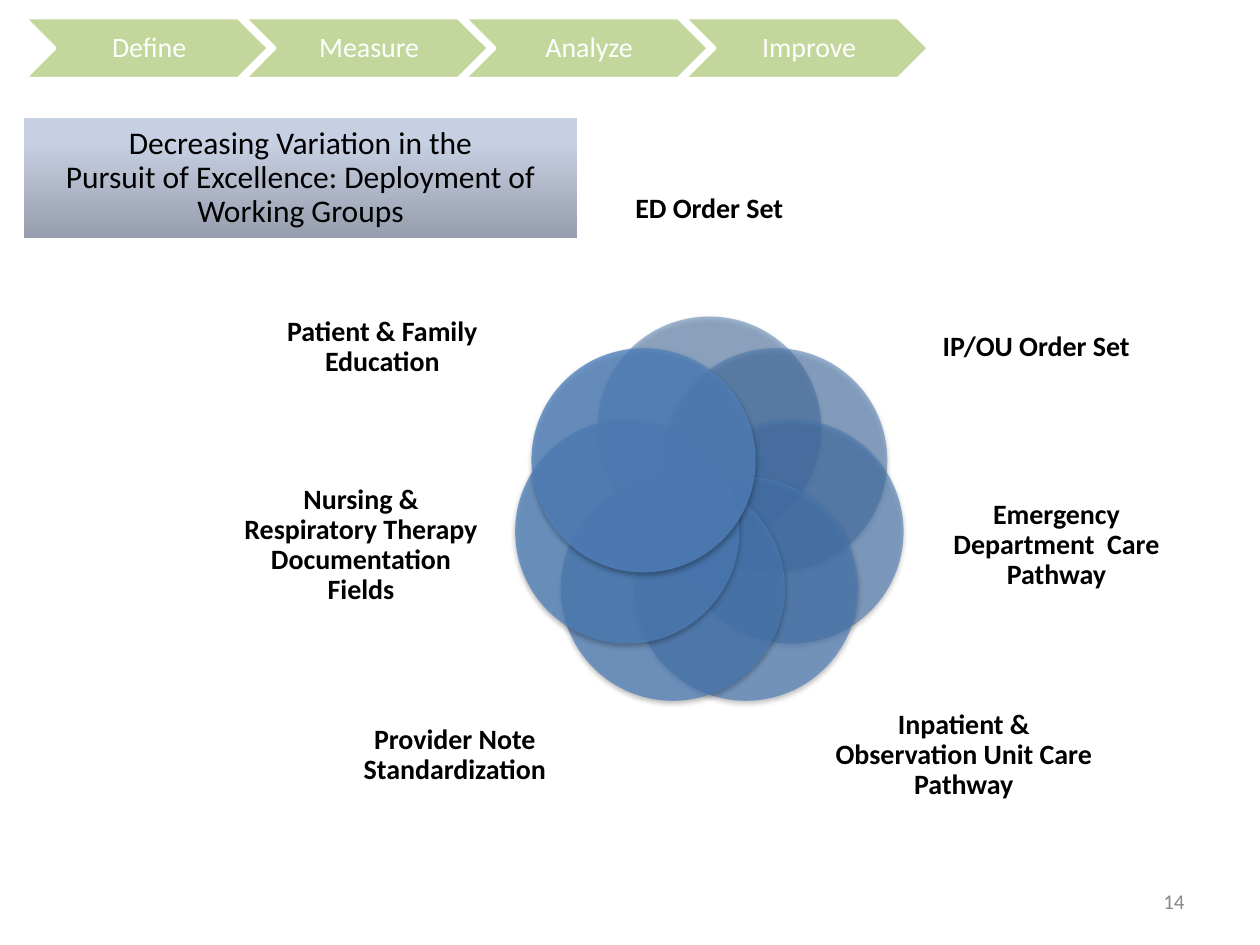
"""Build the working-groups slide: process chevrons, title panel and a seven-circle Venn."""
from math import cos, pi, sin

from lxml import etree
from pptx import Presentation
from pptx.dml.color import RGBColor
from pptx.enum.shapes import MSO_SHAPE
from pptx.enum.text import MSO_ANCHOR, PP_ALIGN
from pptx.oxml.ns import qn
from pptx.util import Inches, Pt

CHEVRON, OVAL = MSO_SHAPE.CHEVRON, MSO_SHAPE.OVAL
MIDDLE, CENTER, RIGHT = MSO_ANCHOR.MIDDLE, PP_ALIGN.CENTER, PP_ALIGN.RIGHT

deck = Presentation()
deck.slide_width, deck.slide_height = Inches(10), Inches(7.5)
COLUMN, ROW = deck.slide_width / 100, deck.slide_height / 75
page = deck.slides.add_slide(deck.slide_layouts[6])


def color(value):
    return RGBColor.from_string(value)


def write(box, lines, size, ink, bold=False, align=CENTER, spacing=0.9, insets=(0, 0, 0, 0)):
    frame = box.text_frame
    frame.word_wrap = True
    frame.vertical_anchor = MIDDLE
    frame.margin_left, frame.margin_top, frame.margin_right, frame.margin_bottom = [
        int(inset * COLUMN) for inset in insets]
    para = frame.paragraphs[0]
    para.alignment, para.line_spacing = align, spacing
    for number, line in enumerate(lines):
        if number:
            para.add_line_break()
        span = para.add_run()
        span.text = line
        span.font.name, span.font.size, span.font.bold = "Calibri", Pt(size), bold
        span.font.color.rgb = color(ink)


title = page.shapes.add_textbox(
    int(1.9 * COLUMN), int(9.4 * ROW), int(43.9 * COLUMN), int(9.5 * ROW))
title.fill.gradient()
title.fill.gradient_angle = 270
for stop, (position, shade) in zip(title.fill.gradient_stops, [(0.2, "C7CFE3"), (1, "969DAD")]):
    stop.position, stop.color.rgb = position, color(shade)
write(title, ["Decreasing Variation in the", "Pursuit of Excellence: Deployment of Working Groups"],
      18, "000000", insets=(1.4, 1.4, 1.4, 1.4))

number_box = page.shapes.add_textbox(
    int(71.7 * COLUMN), int(69.5 * ROW), int(23.3 * COLUMN), int(4 * ROW))
write(number_box, ["14"], 12, "898989", align=RIGHT, spacing=1, insets=(1, 0.5, 1, 0.5))

GROUPS = [
    ("ED Order Set", "4875AC", 46.1, 11.2, 20.4, 10.9),
    ("IP/OU Order Set", "4877AF", 72.6, 21.6, 19.3, 12),
    ("Emergency Department  Care Pathway", "4979B3", 74.4, 36.9, 18.9, 12.8),
    ("Inpatient & Observation Unit Care Pathway", "4A7BB7", 66.3, 54.1, 20.4, 11.7),
    ("Provider Note Standardization", "4C7DB9", 24.1, 54.1, 24, 11.7),
    ("Nursing & Respiratory Therapy Documentation Fields", "4E80BB", 19.2, 36.9, 18.9, 12.8),
    ("Patient & Family Education", "5182BD", 20.7, 21.6, 19.3, 12),
]
CENTER_X, CENTER_Y, ORBIT, DIAMETER = 56.3, 40.7, 6.68, 17.8
for index, (label, shade, left, top, width, height) in enumerate(GROUPS):
    angle = 2 * pi * index / len(GROUPS)
    circle = page.shapes.add_shape(
        OVAL,
        int((CENTER_X + ORBIT * sin(angle) - DIAMETER / 2) * COLUMN),
        int((CENTER_Y - ORBIT * cos(angle) - DIAMETER / 2) * ROW),
        int(DIAMETER * COLUMN), int(DIAMETER * ROW))
    circle.fill.solid()
    circle.fill.fore_color.rgb = color(shade)
    circle.line.fill.background()
    circle.shadow.inherit = False
    properties = circle.element.spPr
    fill_color = properties.find(qn("a:solidFill")).find(qn("a:srgbClr"))
    etree.SubElement(fill_color, qn("a:alpha"), val=str(50000 + 5000 * index))
    shadow = etree.SubElement(properties.find(qn("a:effectLst")), qn("a:outerShdw"),
                              blurRad=str(Pt(3.1)), dist=str(Pt(1.6)), dir="5400000",
                              rotWithShape="0")
    shadow_color = etree.SubElement(shadow, qn("a:srgbClr"), val="000000")
    etree.SubElement(shadow_color, qn("a:alpha"), val="38000")

    label_box = page.shapes.add_textbox(
        int(left * COLUMN), int(top * ROW), int(width * COLUMN), int(height * ROW))
    write(label_box, [label], 16, "000000", bold=True)

for index, phase in enumerate(["Define", "Measure", "Analyze", "Improve"]):
    step = page.shapes.add_shape(
        CHEVRON, int((1.94 + 17.46 * index) * COLUMN), int(1.4 * ROW),
        int(19.4 * COLUMN), int(4.84 * ROW))
    step.fill.solid()
    step.fill.fore_color.rgb = color("C3D69B")
    step.line.color.rgb, step.line.width = color("FFFFFF"), Pt(2)
    step.shadow.inherit = False
    write(step, [phase], 16, "FFFFFF", insets=(0.7, 0.2, 0.3, 0.2))

deck.save("out.pptx")
